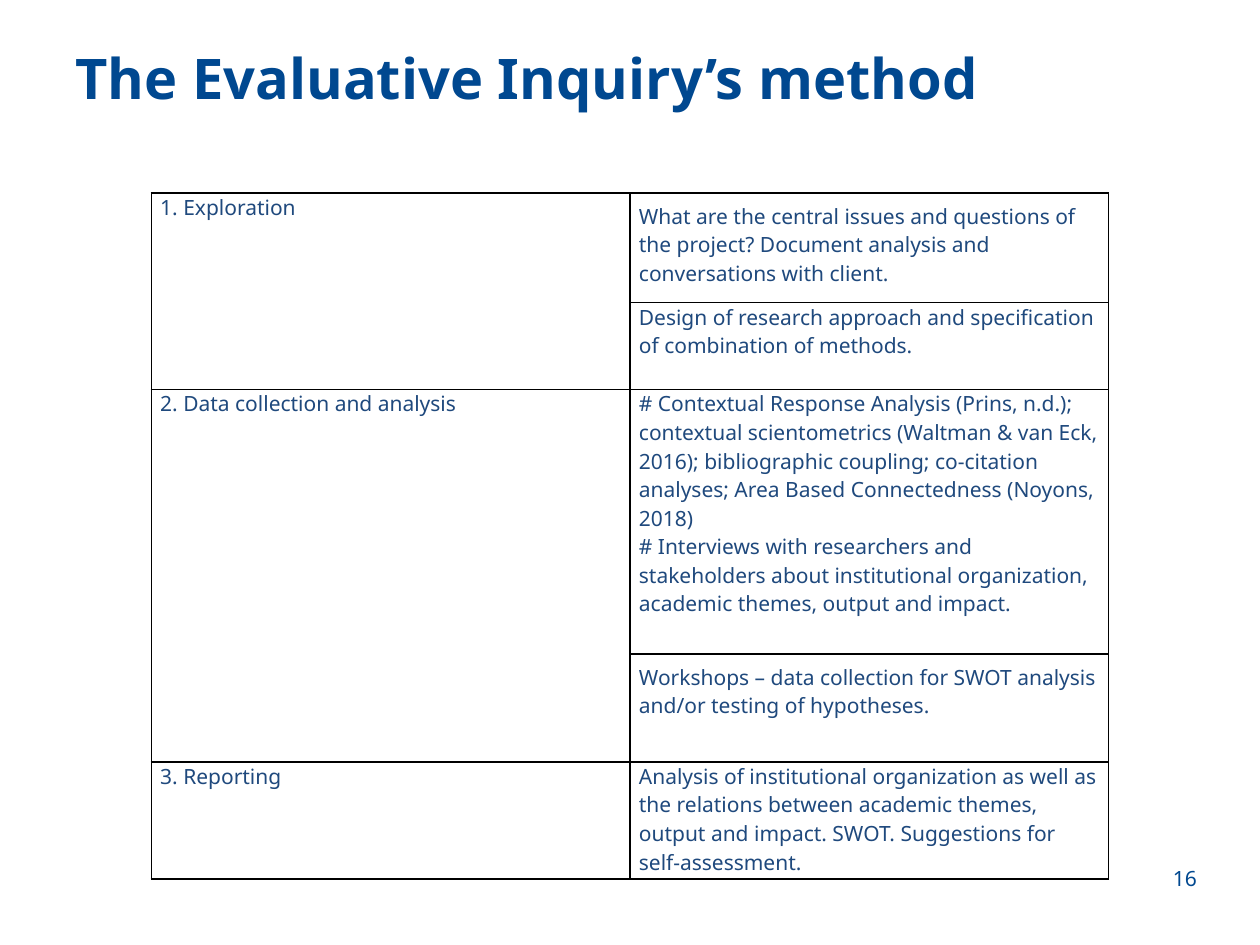
from lxml.etree import SubElement
from pptx import Presentation
from pptx.dml.color import RGBColor
from pptx.enum.text import MSO_ANCHOR as Anchor, PP_ALIGN as Align
from pptx.oxml.ns import qn
from pptx.util import Cm, Pt

FONT = "Noto Sans"
BLUE, TEXT_BLUE, BLACK = "004890", "1F497D", "000000"
INSET = 0.18

COLUMN_WIDTH = 9.65
ROW_HEIGHTS = [2.21, 1.75, 5.33, 2.18, 2.36]

# Row, number of rows covered, label
PHASES = [
    (0, 2, "1. Exploration"),
    (2, 2, "2. Data collection and analysis"),
    (4, 1, "3. Reporting"),
]
# Paragraphs, inset above and below
ACTIVITIES = [
    (["What are the central issues and questions of the project? "
      "Document analysis and conversations with client."], INSET),
    (["Design of research approach and specification of combination "
      "of methods."], 0),
    (["# Contextual Response Analysis (Prins, n.d.); contextual "
      "scientometrics (Waltman & van Eck, 2016); bibliographic coupling; "
      "co-citation analyses; Area Based Connectedness (Noyons, 2018)",
      "# Interviews with researchers and stakeholders about institutional "
      "organization, academic themes, output and impact."], 0),
    (["Workshops – data collection for SWOT analysis and/or testing of "
      "hypotheses."], INSET),
    (["Analysis of institutional organization as well as the relations "
      "between academic themes, output and impact. SWOT. Suggestions for "
      "self-assessment."], 0),
]


def rgb(color):
    return RGBColor.from_string(color)


def write(tf, paragraphs, size, color, bold=False, align=Align.LEFT):
    for i, text in enumerate(paragraphs):
        p = tf.paragraphs[0] if i == 0 else tf.add_paragraph()
        p.text = text
        p.alignment = align
        p.font.name = FONT
        p.font.size = Pt(size)
        p.font.bold = bold
        p.font.color.rgb = rgb(color)


def add_text(s, box, text, size, side=0, top=0, anchor=Anchor.TOP, **style):
    sp = s.shapes.add_textbox(*(Cm(v) for v in box))
    tf = sp.text_frame
    tf.word_wrap = True
    tf.vertical_anchor = anchor
    tf.margin_left = tf.margin_right = Cm(side)
    tf.margin_top, tf.margin_bottom = Cm(top), 0
    write(tf, [text], size, BLUE, **style)


def set_borders(cell, color, width):
    tc_pr = cell._tc.get_or_add_tcPr()
    for i, side in enumerate(("lnL", "lnR", "lnT", "lnB")):
        ln = tc_pr.makeelement(qn(f"a:{side}"), {"w": str(Pt(width))})
        fill = SubElement(ln, qn("a:solidFill"))
        SubElement(fill, qn("a:srgbClr"), val=color)
        tc_pr.insert(i, ln)  # borders come before the fill


def fill_cell(cell, paragraphs, inset=0):
    cell.margin_left = cell.margin_right = Cm(INSET)
    cell.margin_top = cell.margin_bottom = Cm(inset)
    write(cell.text_frame, paragraphs, 12, TEXT_BLUE)


def add_method_table(s, left, top):
    frame = s.shapes.add_table(len(ROW_HEIGHTS), 2, Cm(left), Cm(top),
                               Cm(2 * COLUMN_WIDTH), Cm(sum(ROW_HEIGHTS)))
    table = frame.table
    table.first_row = table.horz_banding = False
    for column in table.columns:
        column.width = Cm(COLUMN_WIDTH)
    for row, height in zip(table.rows, ROW_HEIGHTS):
        row.height = Cm(height)
    for cell in table.iter_cells():
        cell.fill.background()
        set_borders(cell, BLACK, 1)
        fill_cell(cell, [""])

    # Phases on the left, activities on the right
    for row, span, label in PHASES:
        cell = table.cell(row, 0)
        if span > 1:
            cell.merge(table.cell(row + span - 1, 0))
        fill_cell(cell, [label])
    for row, (paragraphs, inset) in enumerate(ACTIVITIES):
        fill_cell(table.cell(row, 1), paragraphs, inset)


def main():
    prs = Presentation()
    prs.slide_width, prs.slide_height = Cm(25.4), Cm(19.05)
    s = prs.slides.add_slide(prs.slide_layouts[6])

    # Title
    add_text(s, (1.27, 0.84, 22.86, 3.05), "The Evaluative Inquiry’s method",
             32, side=0.25, top=0.03, bold=True)
    # Method table
    add_method_table(s, 3.05, 3.89)
    # Slide number
    add_text(s, (22.12, 16.94, 2.01, 1.02), "16", 12,
             anchor=Anchor.BOTTOM, align=Align.RIGHT)

    prs.save("out.pptx")


if __name__ == "__main__":
    main()
